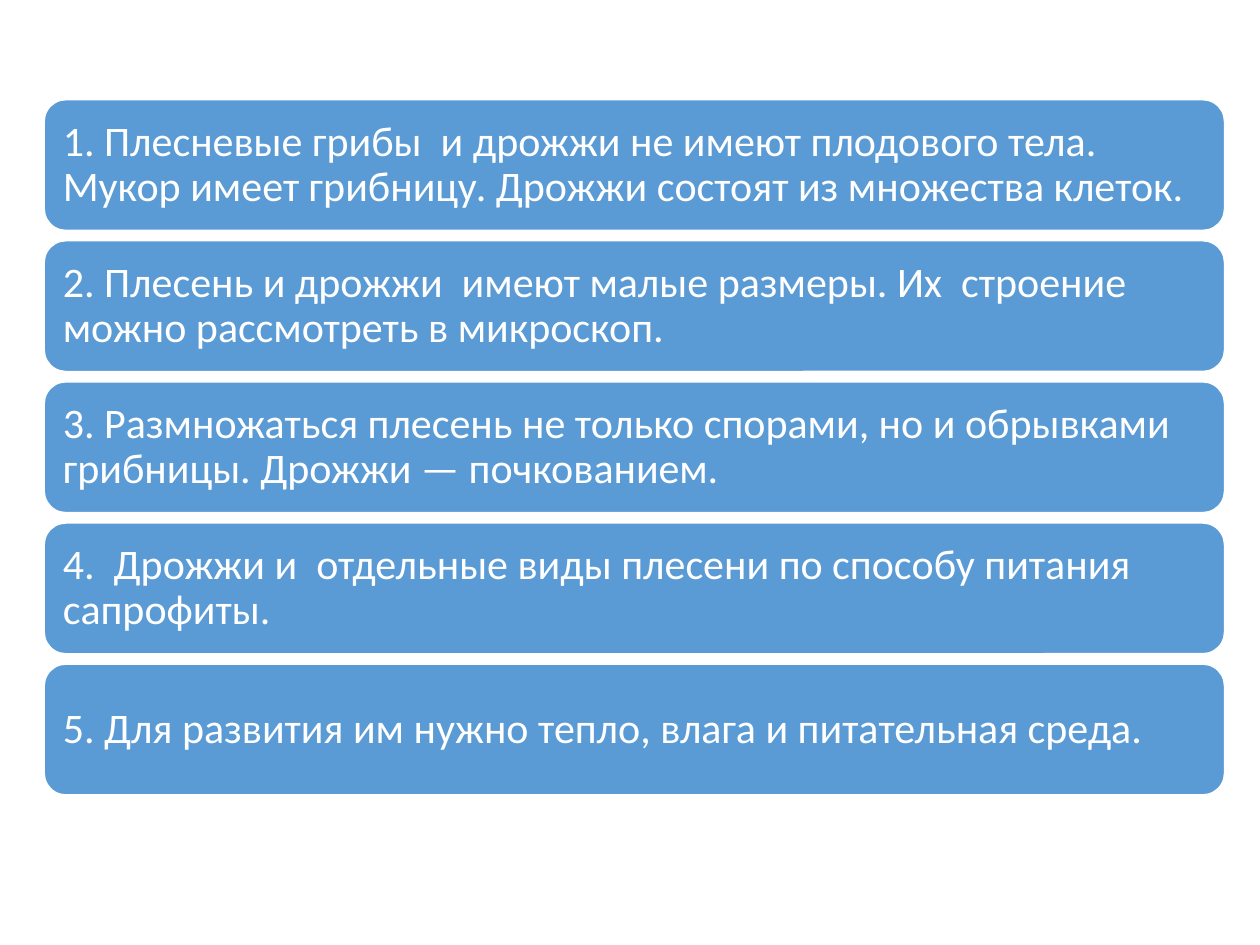
from pptx import Presentation
from pptx.dml.color import RGBColor
from pptx.enum.shapes import MSO_SHAPE as Shape
from pptx.enum.text import MSO_ANCHOR as Anchor, PP_ALIGN as Align
from pptx.util import Inches, Pt

FACTS = [
    "1. Плесневые грибы  и дрожжи не имеют плодового тела. "
    "Мукор имеет грибницу. Дрожжи состоят из множества клеток.",
    "2. Плесень и дрожжи  имеют малые размеры. Их  строение "
    "можно рассмотреть в микроскоп.",
    "3. Размножаться плесень не только спорами, но и обрывками "
    "грибницы. Дрожжи — почкованием.",
    "4.  Дрожжи и  отдельные виды плесени по способу питания сапрофиты.",
    "5. Для развития им нужно тепло, влага и питательная среда.",
]
BLUE = "5B9BD5"
WHITE = "FFFFFF"


def color(hex_value):
    return RGBColor.from_string(hex_value)


def write_text(shape, text, size=24, font="Calibri", text_color=WHITE, inset=0.1):
    frame = shape.text_frame
    frame.word_wrap = True
    frame.vertical_anchor = Anchor.MIDDLE
    frame.margin_left = frame.margin_right = Inches(inset)
    frame.margin_top = frame.margin_bottom = Inches(inset)
    paragraph = frame.paragraphs[0]
    paragraph.text = text
    paragraph.alignment = Align.LEFT
    paragraph.line_spacing = 0.9
    paragraph.font.name = font
    paragraph.font.size = Pt(size)
    paragraph.font.color.rgb = color(text_color)


def add_fact_list(slide, facts, left, top, width, height, gap):
    """Stack one rounded bar per fact, with equal gaps, in the given box."""
    bar_height = (height - gap * (len(facts) - 1)) / len(facts)
    for index, fact in enumerate(facts):
        bar = slide.shapes.add_shape(
            Shape.ROUNDED_RECTANGLE,
            Inches(left), Inches(top + index * (bar_height + gap)),
            Inches(width), Inches(bar_height),
        )
        bar.shadow.inherit = False
        bar.fill.solid()
        bar.fill.fore_color.rgb = color(BLUE)
        bar.line.color.rgb = color(WHITE)
        bar.line.width = Pt(1)
        write_text(bar, fact)


def main():
    presentation = Presentation()
    presentation.slide_width = Inches(10)
    presentation.slide_height = Inches(7.5)
    slide = presentation.slides.add_slide(presentation.slide_layouts[6])
    add_fact_list(slide, FACTS, left=0.35, top=0.79, width=9.37, height=5.52, gap=0.08)
    presentation.save("out.pptx")


if __name__ == "__main__":
    main()
